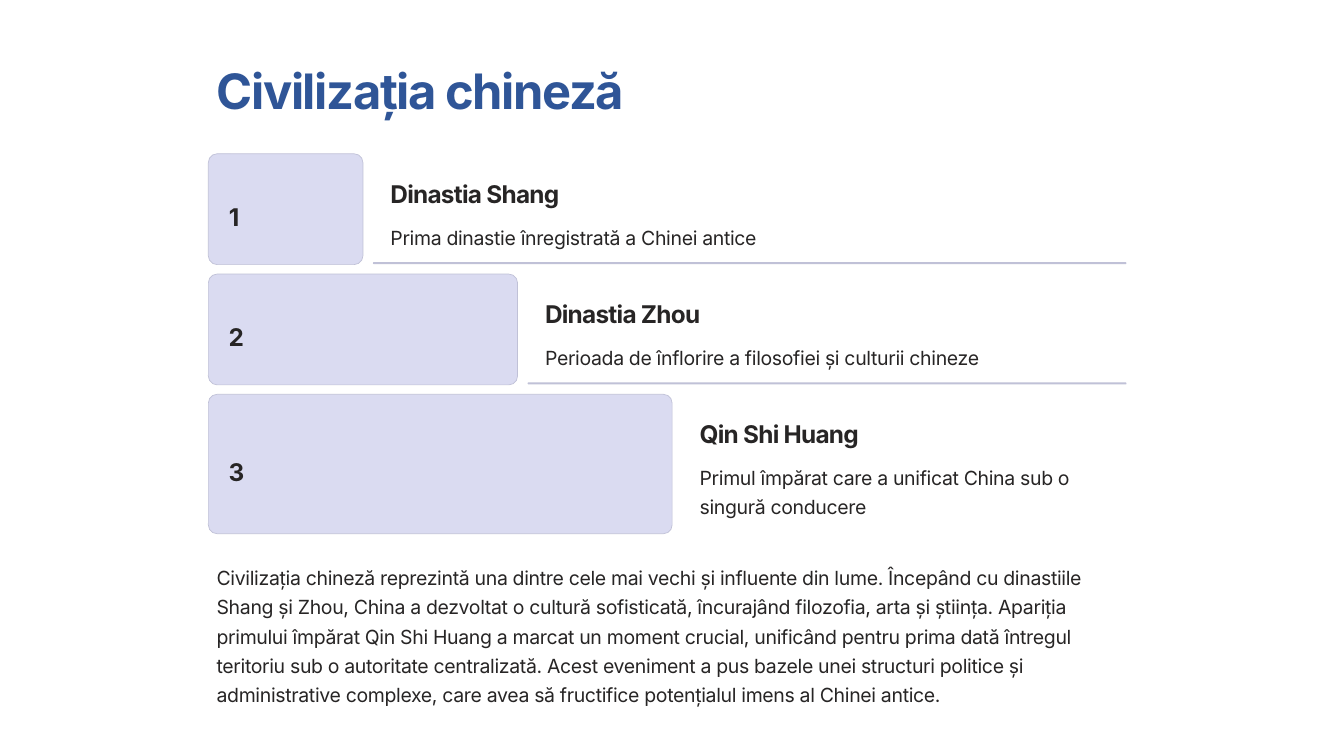
"""Build the slide on Chinese civilisation with its three-step staircase."""
import pptx
import pptx.dml.color
import pptx.enum.shapes
import pptx.enum.text
import pptx.util

Pt = pptx.util.Pt
ALIGN = pptx.enum.text.PP_ALIGN


def color(value):
    return pptx.dml.color.RGBColor.from_string(value)


class Deck:
    font = "Inter"
    ink = "272525"
    title_ink = "2F5597"
    bar_fill = "DADBF1"
    edge = "C0C1D7"
    radius = 7.5

    def __init__(self, width, height):
        self.presentation = pptx.Presentation()
        self.presentation.slide_width = Pt(width)
        self.presentation.slide_height = Pt(height)
        self.slide = self.presentation.slides.add_slide(self.presentation.slide_layouts[6])

    def text(self, words, left, top, width, height, size, line, tracking,
             bold=False, ink=None, align=ALIGN.LEFT, side_margin=7.2, wrap=True):
        box = self.slide.shapes.add_textbox(Pt(left), Pt(top), Pt(width), Pt(height))
        frame = box.text_frame
        frame.word_wrap = wrap
        frame.margin_left = frame.margin_right = Pt(side_margin)
        paragraph = frame.paragraphs[0]
        paragraph.text = words
        paragraph.alignment = align
        paragraph.line_spacing = Pt(line)
        font = paragraph.font
        font.name = self.font
        font.size = Pt(size)
        font.bold = bold
        font.color.rgb = color(ink or self.ink)
        font._element.set("spc", str(round(tracking * 100)))

    def title(self, words, left, top, width, height):
        self.text(words, left, top, width, height, 41.8, 52.3, -1.15, True, self.title_ink)

    def heading(self, words, left, top):
        self.text(words, left, top, 209.5, 26, 20.9, 26.1, -0.63, True)

    def number(self, words, left, top, width, height):
        self.text(words, left, top, width, height, 20.9, 31.4, -0.6, True,
                  align=ALIGN.CENTER, side_margin=0, wrap=False)

    def body(self, words, left, top, width, height):
        self.text(words, left, top, width, height, 16.7, 25.1, -0.27)

    def rounded(self, left, top, width, height, fill, outline=None):
        shape = self.slide.shapes.add_shape(
            pptx.enum.shapes.MSO_SHAPE.ROUNDED_RECTANGLE,
            Pt(left), Pt(top), Pt(width), Pt(height))
        shape.shadow.inherit = False
        shape.adjustments[0] = min(0.5, self.radius / min(width, height))
        shape.fill.solid()
        shape.fill.fore_color.rgb = color(fill)
        if outline:
            shape.line.color.rgb = color(outline)
            shape.line.width = Pt(0.6)
        else:
            shape.line.fill.background()

    def bar(self, left, top, width, height):
        self.rounded(left, top, width, height, self.bar_fill, self.edge)

    def rule(self, left, top, right):
        self.rounded(left, top, right - left, 1.7, self.edge)

    def save(self):
        self.presentation.save("out.pptx")


def main():
    deck = Deck(1152, 648)
    left, right = 178.6, 965.6
    first_top, row_step, bar_step, number_height = 131.8, 103.1, 132.5, 31.7
    dynasties = [
        ("Dinastia Shang", "Prima dinastie înregistrată a Chinei antice", 95, 9.4, 340, 25.2),
        ("Dinastia Zhou", "Perioada de înflorire a filosofiei și culturii chineze",
         95, 12.2, 400, 25.2),
        ("Qin Shi Huang", "Primul împărat care a unificat China sub o singură conducere",
         119.5, 13, 364.3, 50.4),
    ]

    deck.title("Civilizația chineză", left, 46.1, 418.3, 52.6)
    for index, (name, detail, height, digit_width, detail_width, detail_height) in enumerate(dynasties):
        top = first_top + index * row_step
        bar_width = (index + 1) * bar_step
        bar_right = left + bar_width
        deck.bar(left, top, bar_width, height)
        deck.number(str(index + 1), left + 17.3, top + (height - number_height) / 2,
                    digit_width, number_height)
        deck.heading(name, bar_right + 16.5, top + 17)
        deck.body(detail, bar_right + 16.5, top + 53, detail_width, detail_height)
        if index < len(dynasties) - 1:
            deck.rule(bar_right + 8.6, top + 92.9, right)

    deck.body(
        "Civilizația chineză reprezintă una dintre cele mai vechi și influente din lume. "
        "Începând cu dinastiile Shang și Zhou, China a dezvoltat o cultură sofisticată, "
        "încurajând filozofia, arta și știința. Apariția primului împărat Qin Shi Huang "
        "a marcat un moment crucial, unificând pentru prima dată întregul teritoriu sub "
        "o autoritate centralizată. Acest eveniment a pus bazele unei structuri politice "
        "și administrative complexe, care avea să fructifice potențialul imens al Chinei antice.",
        left, 476.6, 794.9, 125.3)
    deck.save()


if __name__ == "__main__":
    main()
